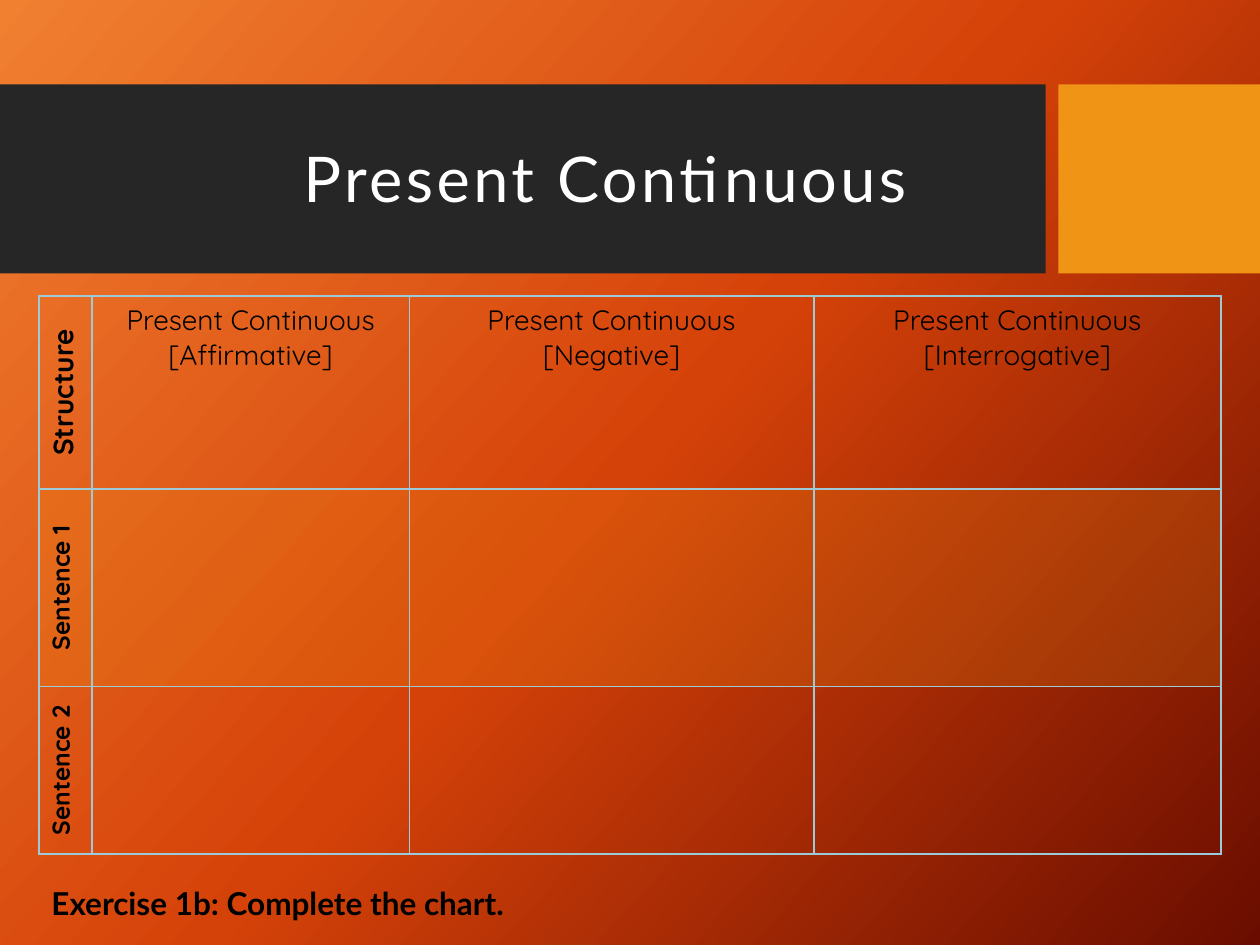
from lxml.etree import SubElement
from pptx import Presentation
from pptx.dml.color import RGBColor
from pptx.enum.shapes import MSO_SHAPE
from pptx.enum.text import MSO_ANCHOR, PP_ALIGN
from pptx.oxml.ns import qn
from pptx.util import Inches, Pt

WIDTH, HEIGHT = 10, 7.5
BLACK, WHITE, CHARCOAL, AMBER, RULE = "000000", "FFFFFF", "262626", "F09415", "9CCAD9"
BACKDROP = [(0, "F18031"), (50, "D54209"), (100, "6A0D00")]
COLUMN_WIDTHS = [0.42, 2.52, 3.21, 3.23]
ROW_HEIGHTS = [1.53, 1.57, 1.33]
ROW_LABELS = [("Structure", 16), ("Sentence 1", 14), ("Sentence 2", 14)]
FORMS = ["Affirmative", "Negative", "Interrogative"]


def color(hex_code):
    """Return the RGB colour for a hex string."""
    return RGBColor.from_string(hex_code)


def emu(box):
    """Convert a box in inches to slide lengths."""
    return [Inches(length) for length in box]


def style(frame, font, size, hex_code, bold=False, align=PP_ALIGN.CENTER):
    """Format every paragraph and run of a text frame."""
    for paragraph in frame.paragraphs:
        paragraph.alignment = align
        for run in paragraph.runs:
            run.font.name, run.font.size, run.font.bold = font, Pt(size), bold
            run.font.color.rgb = color(hex_code)


def add_backdrop(slide, stops, angle):
    """Fill the slide background with a linear gradient."""
    fill = slide.background.fill
    fill.gradient()
    fill.gradient_angle = 360 - angle
    stop_list = slide.background._cSld.find(".//" + qn("a:gsLst"))
    for stop in list(stop_list):
        stop_list.remove(stop)
    for percent, hex_code in stops:
        stop = SubElement(stop_list, qn("a:gs"), pos=str(percent * 1000))
        SubElement(stop, qn("a:srgbClr"), val=hex_code)


def add_band(slide, box, shares):
    """Draw the dark title band and the amber block at its right."""
    left, top, width, height = box
    band_share, block_share = shares
    block_width = width * block_share
    for x, part_width, hex_code in [(left, width * band_share, CHARCOAL),
                                    (left + width - block_width, block_width, AMBER)]:
        part = slide.shapes.add_shape(MSO_SHAPE.RECTANGLE, *emu((x, top, part_width, height)))
        part.shadow.inherit = False
        part.fill.solid()
        part.fill.fore_color.rgb = color(hex_code)
        part.line.fill.background()


def add_text(slide, box, text, size, hex_code, **options):
    """Place a wrapped text box and return its frame."""
    frame = slide.shapes.add_textbox(*emu(box)).text_frame
    frame.word_wrap = True
    frame.text = text
    style(frame, "Lato", size, hex_code, **options)
    return frame


def add_title(slide, box, text):
    """Place the letter-spaced title in the middle of its box."""
    frame = add_text(slide, box, text, 36, WHITE)
    frame.vertical_anchor = MSO_ANCHOR.MIDDLE
    paragraph = frame.paragraphs[0]
    paragraph.line_spacing = 0.9
    paragraph.space_after = Pt(6)
    paragraph.runs[0].font._element.set("spc", "200")


def dress_cell(cell, tinted):
    """Rule all sides of a cell and tint it or leave it clear."""
    properties = cell._tc.get_or_add_tcPr()
    for side in ("lnL", "lnR", "lnT", "lnB"):
        line = SubElement(properties, qn("a:" + side), w=str(Pt(1)))
        solid = SubElement(line, qn("a:solidFill"))
        SubElement(solid, qn("a:srgbClr"), val=RULE)
    if tinted:
        cell.fill.solid()
        cell.fill.fore_color.rgb = color(AMBER)
        tint = properties.find(qn("a:solidFill")).find(qn("a:srgbClr"))
        SubElement(tint, qn("a:alpha"), val="20000")
    else:
        cell.fill.background()


def add_exercise_chart(slide, box):
    """Build the table of forms by structure and sentence."""
    table = slide.shapes.add_table(len(ROW_HEIGHTS), len(COLUMN_WIDTHS), *emu(box)).table
    table.first_row = table.horz_banding = False
    for column, width in zip(table.columns, COLUMN_WIDTHS):
        column.width = Inches(width)
    for index, (row, height) in enumerate(zip(table.rows, ROW_HEIGHTS)):
        row.height = Inches(height)
        for cell in row.cells:
            dress_cell(cell, tinted=index == 1)
    for index, (label, size) in enumerate(ROW_LABELS):
        cell = table.cell(index, 0)
        cell.text_frame.text = label
        cell._tc.get_or_add_tcPr().set("vert", "vert270")
        style(cell.text_frame, "Quicksand", size, BLACK, bold=True)
    for index, form in enumerate(FORMS, start=1):
        frame = table.cell(0, index).text_frame
        frame.text = f"Present Continuous\n[{form}]"
        style(frame, "Quicksand", 16, BLACK)


def main():
    """Build and save the slide."""
    deck = Presentation()
    deck.slide_width, deck.slide_height = Inches(WIDTH), Inches(HEIGHT)
    slide = deck.slides.add_slide(deck.slide_layouts[6])
    margin = (WIDTH - sum(COLUMN_WIDTHS)) / 2
    content_width = WIDTH - 2 * margin
    add_backdrop(slide, BACKDROP, 42)
    add_band(slide, (0, 0.67, WIDTH, HEIGHT / 5), (0.83, 0.16))
    add_exercise_chart(slide, (margin, 2.35, content_width, sum(ROW_HEIGHTS)))
    add_text(slide, (margin, 6.97, content_width, 0.4), "Exercise 1b: Complete the chart.",
             18, BLACK, bold=True, align=PP_ALIGN.JUSTIFY)
    add_title(slide, (0.23, 0.62, 9.15, HEIGHT * 0.22), "Present Continuous")
    deck.save("out.pptx")


if __name__ == "__main__":
    main()
